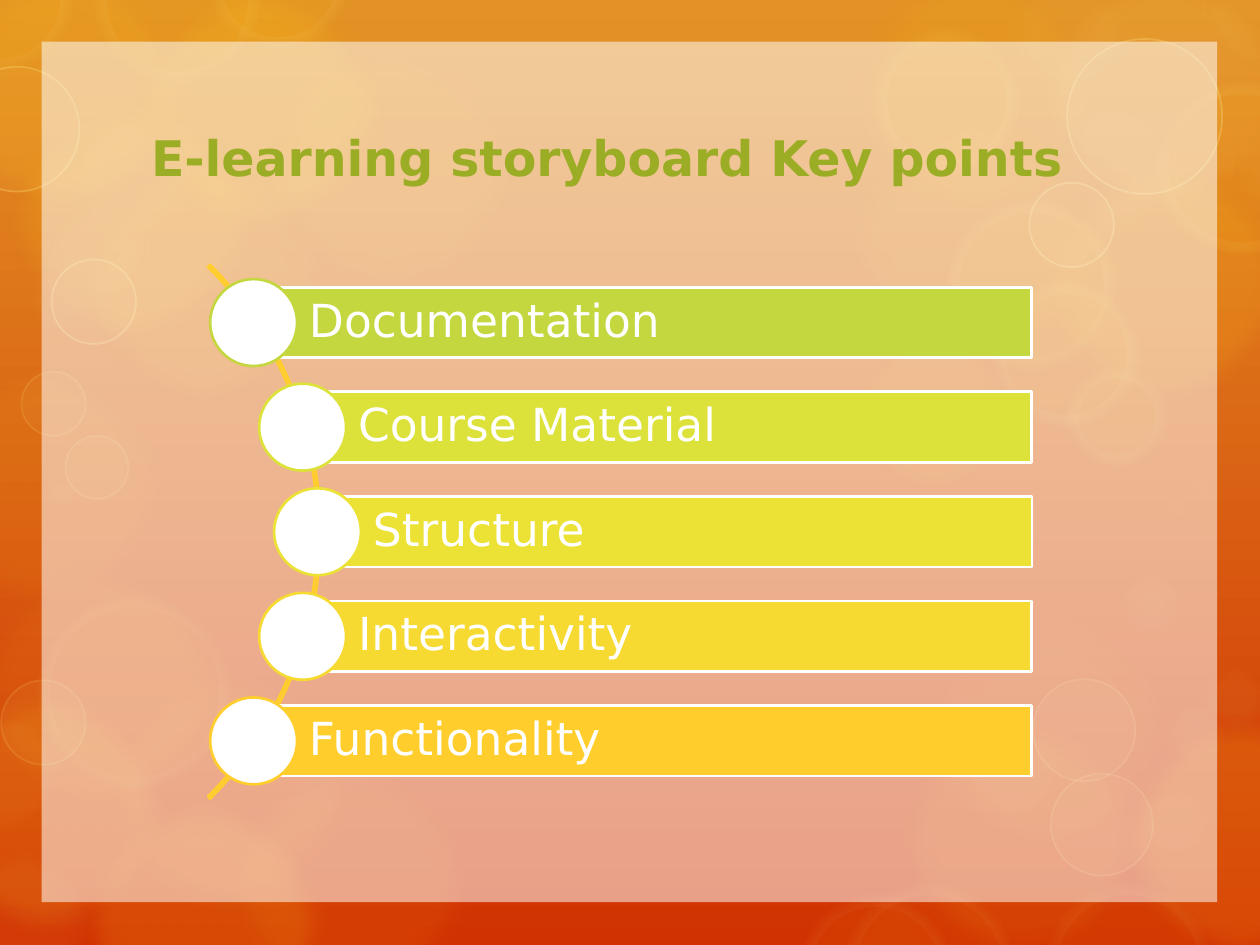
"""Build the slide of e-learning storyboard key points."""
from math import sqrt

from lxml.etree import SubElement
from pptx import Presentation
from pptx.dml.color import RGBColor
from pptx.enum.shapes import MSO_SHAPE as SHAPE
from pptx.enum.text import MSO_ANCHOR as ANCHOR, PP_ALIGN as ALIGN
from pptx.oxml.ns import qn
from pptx.util import Inches, Pt

WHITE = RGBColor(0xFF, 0xFF, 0xFF)
GREEN = RGBColor(0x9B, 0xAD, 0x24)
GOLD = RGBColor(0xFF, 0xCE, 0x2D)
AMBER = RGBColor(0xFD, 0xC6, 0x1B)
LEMON = RGBColor(0xFF, 0xE2, 0x81)
CREAM = RGBColor(0xFE, 0xEB, 0xAE)
BG_TOP = RGBColor(0xE3, 0x93, 0x25)
BG_BOTTOM = RGBColor(0xD1, 0x32, 0x02)
FONT = "DejaVu Sans"

TITLE = "E-learning storyboard Key points"
POINTS = [
    ("Documentation", RGBColor(0xC4, 0xD7, 0x3F)),
    ("Course Material", RGBColor(0xDC, 0xE2, 0x3A)),
    ("Structure", RGBColor(0xEC, 0xE2, 0x35)),
    ("Interactivity", RGBColor(0xF6, 0xD9, 0x31)),
    ("Functionality", GOLD),
]

GLOW = 2.09
GLOWS = [
    (AMBER, 8, [(-0.26, 4.42), (0.77, 5.24), (1.73, 5.96), (-0.7, 2.82)]),
    (AMBER, 10, [(0.57, 1.2), (2.05, 0.31), (6.69, -0.29), (6.69, 0.86),
                 (7.06, 5.62)]),
    (AMBER, 16, [(0.57, 6.27), (8.81, 5.62), (-0.69, 5.41)]),
    (AMBER, 14, [(-0.56, -0.32)]),
    (AMBER, 20, [(1.01, -0.18)]),
    (AMBER, 15, [(0, 0.72), (8.2, 1.2)]),
    (AMBER, 5, [(7.29, 4.77)]),
    (LEMON, 10, [(8.2, -0.32)]),
]
BUBBLES = [
    (AMBER, 10, CREAM, 14, 6, [
        (9.18, 0.65, 1.37), (6.94, 0.23, 1.14), (7.52, 1.59, 1.33),
        (7.89, 2.24, 1.14), (8.47, 2.91, 0.79), (0.75, -0.65, 1.31),
        (1.64, -0.74, 1.13), (-0.56, -0.57, 1.13)]),
    (AMBER, 6, CREAM, 14, 4, [
        (0.3, 4.73, 1.53), (6.33, 7.1, 1.23), (6.7, 7.01, 1.35),
        (8.29, 7.01, 1.32)]),
    (LEMON, 5, LEMON, 5, 15, [
        (-0.37, 6.75, 1.13), (-0.44, 5.64, 0.98), (7.63, 5.73, 0.81),
        (9, 6.2, 0.66), (8.83, 4.48, 0.61), (9.2, 5.53, 0.61),
        (9.5, 5.24, 0.61), (9.37, 3.7, 0.33), (9.18, 3.87, 0.33),
        (9.41, 4.03, 0.33), (0.3, 3.7, 0.39)]),
    (LEMON, 5, LEMON, 5, 30, [
        (0.52, 0.92, 1), (0.35, 1.59, 0.85), (0.17, 2.1, 0.57),
        (7.99, -0.24, 0.99), (9.53, -0.39, 0.99), (9.75, 0.82, 0.99),
        (8.3, 0.8, 1.06)]),
    (LEMON, 5, LEMON, 1, 15, [
        (0.01, 5.4, 0.67), (8.34, 6.14, 0.81), (8.2, 5.39, 0.81),
        (0.17, 2.95, 0.51), (0.52, 3.46, 0.5)]),
    (LEMON, 5, LEMON, 1, 30, [
        (-0.36, 0.53, 0.99), (0.41, 2.06, 0.67), (8.47, 0.31, 1.23),
        (8.17, 1.45, 0.67)]),
    (AMBER, 10, None, 0, 0, [(6.75, 2.62, 1.33)]),
]

ARC_X, ARC_Y, ARC_SIZE, ARC_R = -0.45, 4.22, 5.99, 2.97
BAR_RIGHT, BAR_H, DOT, PITCH = 8.19, 0.56, 0.69, 0.83


def set_alpha(fill, percent):
    color = fill._xPr.find(qn("a:solidFill"))[0]
    SubElement(color, qn("a:alpha"), val=str(percent * 1000))


def add_shape(s, kind, box, fill=None, alpha=100, line=None, width=1.5,
              line_alpha=100, soft=0):
    sp = s.shapes.add_shape(kind, *map(Inches, box))
    sp.shadow.inherit = False
    if fill is None:
        sp.fill.background()
    else:
        sp.fill.solid()
        sp.fill.fore_color.rgb = fill
        if alpha < 100:
            set_alpha(sp.fill, alpha)
    if line is None:
        sp.line.fill.background()
    else:
        sp.line.color.rgb = line
        sp.line.width = Pt(width)
        if line_alpha < 100:
            set_alpha(sp.line.fill, line_alpha)
    if soft:
        effects = sp._element.spPr.find(qn("a:effectLst"))
        SubElement(effects, qn("a:softEdge"), rad=str(Inches(soft)))
    return sp


def set_text(sp, text, size, color, bold=False, spacing=1.0,
             insets=(0.1, 0.05, 0.1, 0.05)):
    tf = sp.text_frame
    tf.word_wrap = True
    tf.vertical_anchor = ANCHOR.MIDDLE
    (tf.margin_left, tf.margin_top,
     tf.margin_right, tf.margin_bottom) = map(Inches, insets)
    p = tf.paragraphs[0]
    p.alignment = ALIGN.LEFT
    p.line_spacing = spacing
    r = p.add_run()
    r.text = text
    r.font.name, r.font.size, r.font.bold = FONT, Pt(size), bold
    r.font.color.rgb = color


def add_background(s):
    fill = s.background.fill
    fill.gradient()
    fill.gradient_angle = 270
    for stop, color, at in zip(fill.gradient_stops, (BG_TOP, BG_BOTTOM), (0, 1)):
        stop.color.rgb = color
        stop.position = at
    for color, alpha, places in GLOWS:
        for x, y in places:
            add_shape(s, SHAPE.OVAL, (x, y, GLOW, GLOW), color, alpha, soft=0.17)
    for color, alpha, line, width, line_alpha, places in BUBBLES:
        for x, y, d in places:
            add_shape(s, SHAPE.OVAL, (x, y, d, d), color, alpha, line, width,
                      line_alpha, soft=0 if width == 1 else 0.1)
    add_shape(s, SHAPE.RECTANGLE, (0.33, 0.33, 9.33, 6.83), WHITE, 53)


def add_points(s):
    half = ARC_SIZE / 2
    arc = add_shape(s, SHAPE.BLOCK_ARC,
                    (ARC_X - half, ARC_Y - half, ARC_SIZE, ARC_SIZE), line=GOLD)
    for i, value in enumerate((189, 27, 0.004)):
        arc.adjustments[i] = value
    for i, (text, color) in enumerate(POINTS):
        dy = (i - (len(POINTS) - 1) / 2) * PITCH
        x, y = ARC_X + sqrt(ARC_R ** 2 - dy ** 2), ARC_Y + dy
        bar = add_shape(s, SHAPE.RECTANGLE,
                        (x, y - BAR_H / 2, BAR_RIGHT - x, BAR_H), color, line=WHITE)
        set_text(bar, text, 26, WHITE, spacing=0.9,
                 insets=(0.44, 0.07, 0.07, 0.07))
        add_shape(s, SHAPE.OVAL, (x - DOT / 2, y - DOT / 2, DOT, DOT), WHITE,
                  line=color)


def main():
    prs = Presentation()
    prs.slide_width, prs.slide_height = Inches(10), Inches(7.5)
    s = prs.slides.add_slide(prs.slide_layouts[6])
    add_background(s)
    title = s.shapes.add_textbox(*map(Inches, (1.1, 0.74, 7.79, 1.01)))
    set_text(title, TITLE, 28, GREEN, bold=True)
    add_points(s)
    prs.save("out.pptx")


if __name__ == "__main__":
    main()
